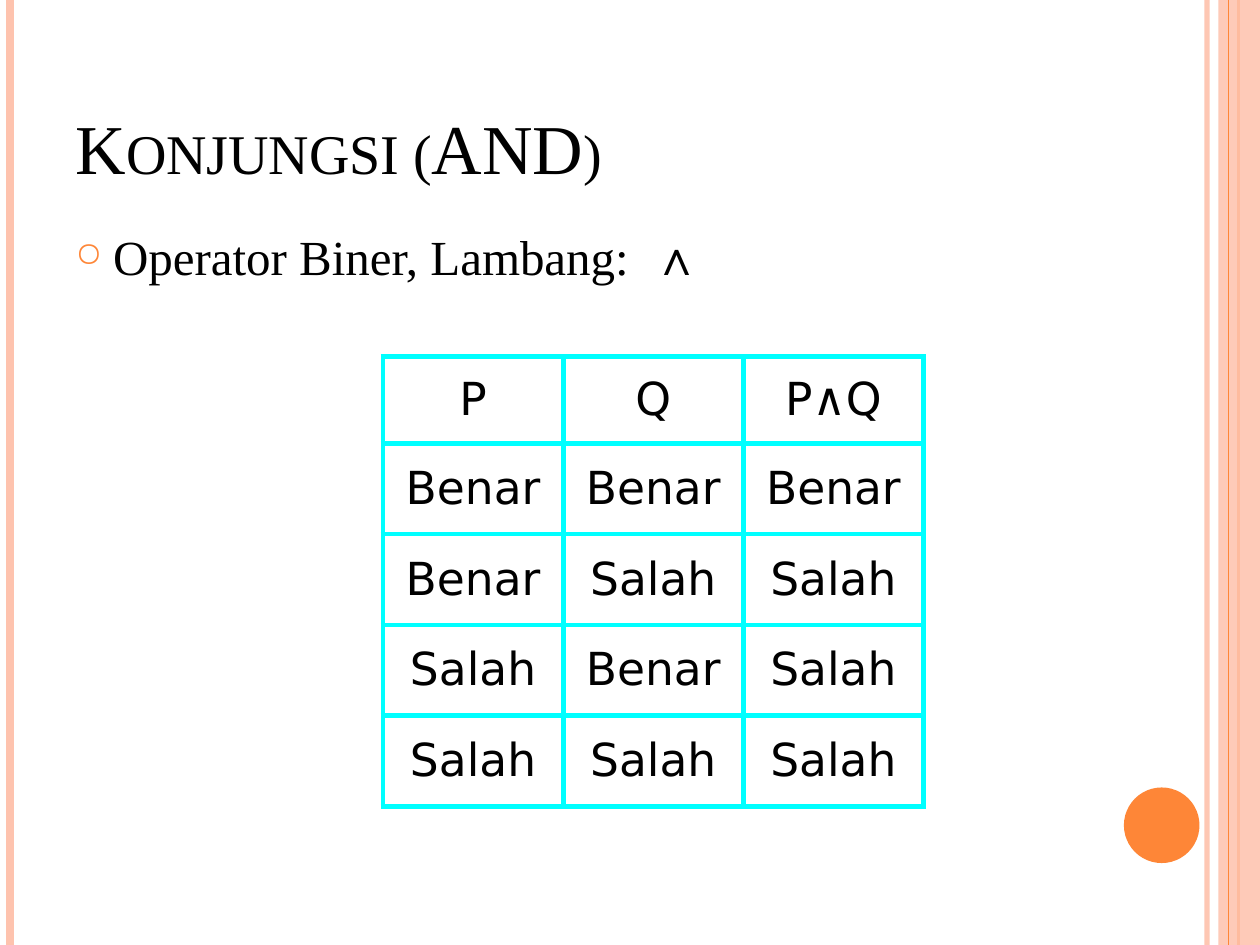
"""Build a slide on logical conjunction with its truth table."""
from typing import NamedTuple, Optional

from lxml.etree import SubElement
from pptx import Presentation
from pptx.dml.color import RGBColor
from pptx.enum.shapes import MSO_CONNECTOR, MSO_SHAPE
from pptx.enum.text import MSO_ANCHOR, PP_ALIGN
from pptx.oxml.ns import qn
from pptx.util import Inches, Pt

HUES = {"ink": "000000", "peach": "FEC3AE", "orange": "FE8637", "cyan": "00FFFF"}
SERIF = "Times New Roman"
SANS = "DejaVu Sans"


class Rule(NamedTuple):
    x: float
    hue: str
    width: float
    alpha: Optional[int] = None


class Solid(NamedTuple):
    kind: MSO_SHAPE
    box: tuple
    hue: str
    alpha: Optional[int] = None


BACK = [Rule(9.58, "peach", 3, 93), Rule(0.08, "peach", 4.5), Rule(9.83, "orange", 1.5)]
BAND = Solid(MSO_SHAPE.RECTANGLE, (9.67, 0, 0.33, 7.5), "peach", 87)
EDGE = Rule(9.75, "orange", 0.75)
DISC = Solid(MSO_SHAPE.OVAL, (8.92, 6.25, 0.6, 0.6), "orange")
TRUTH = [
    ("P", "Q", "P∧Q"),
    ("Benar", "Benar", "Benar"),
    ("Benar", "Salah", "Salah"),
    ("Salah", "Benar", "Salah"),
    ("Salah", "Salah", "Salah"),
]


def color(hue: str) -> RGBColor:
    return RGBColor.from_string(HUES[hue])


def fade(item, alpha: Optional[int]) -> None:
    if alpha is not None:
        tone = next(item._element.spPr.iter(qn("a:srgbClr")))
        SubElement(tone, qn("a:alpha"), val=str(alpha * 1000))


def draw_rule(slide, rule: Rule) -> None:
    x = Inches(rule.x)
    line = slide.shapes.add_connector(MSO_CONNECTOR.STRAIGHT, x, 0, x, Inches(7.5))
    line.line.color.rgb = color(rule.hue)
    line.line.width = Pt(rule.width)
    fade(line, rule.alpha)
    SubElement(line._element.spPr, qn("a:effectLst"))


def draw_solid(slide, solid: Solid) -> None:
    shape = slide.shapes.add_shape(solid.kind, *map(Inches, solid.box))
    shape.shadow.inherit = False
    shape.fill.solid()
    shape.fill.fore_color.rgb = color(solid.hue)
    shape.line.fill.background()
    fade(shape, solid.alpha)


def add_run(para, text: str, size: float, face: str = SERIF, bold: bool = False):
    run = para.add_run()
    run.text = text
    run.font.size = Pt(size)
    run.font.name = face
    run.font.bold = bold
    run.font.color.rgb = color("ink")
    return run


def draw_title(slide) -> None:
    title = slide.shapes.title
    title.left, title.top, title.width, title.height = map(Inches, (0.5, 0.3, 8.17, 1.25))
    title.text_frame.vertical_anchor = MSO_ANCHOR.BOTTOM
    para = title.text_frame.paragraphs[0]
    para.alignment = PP_ALIGN.LEFT
    run = add_run(para, "Konjungsi (AND)", 40)
    run.font._element.set("cap", "small")


def draw_body(slide) -> None:
    box = slide.shapes.add_textbox(*map(Inches, (0.5, 1.75, 8.17, 5.33)))
    box.text_frame.word_wrap = True
    para = box.text_frame.paragraphs[0]
    props = para._p.get_or_add_pPr()
    props.set("marL", str(Inches(0.3)))
    props.set("indent", str(Inches(-0.3)))
    tint = SubElement(props, qn("a:buClr"))
    SubElement(tint, qn("a:srgbClr"), val=HUES["orange"])
    SubElement(props, qn("a:buSzPct"), val="70000")
    SubElement(props, qn("a:buChar"), char="○")
    tabs = SubElement(props, qn("a:tabLst"))
    SubElement(tabs, qn("a:tab"), pos=str(Inches(4.58)), algn="l")
    add_run(para, "Operator Biner, Lambang:\t", 28)
    add_run(para, "∧", 28, bold=True)


def frame_cell(cell) -> None:
    props = cell._tc.get_or_add_tcPr()
    for place, side in enumerate(("lnL", "lnR", "lnT", "lnB")):
        line = props.makeelement(qn(f"a:{side}"), {"w": str(Pt(3))})
        fill = SubElement(line, qn("a:solidFill"))
        SubElement(fill, qn("a:srgbClr"), val=HUES["cyan"])
        props.insert(place, line)


def draw_table(slide) -> None:
    frame = slide.shapes.add_table(5, 3, *map(Inches, (3.04, 2.83, 4.29, 3.57)))
    table = frame.table
    table.first_row = table.horz_banding = False
    for col in table.columns:
        col.width = Inches(1.43)
    for i, (row, words) in enumerate(zip(table.rows, TRUTH)):
        row.height = Inches(0.72 if i else 0.69)
        for cell, word in zip(row.cells, words):
            cell.fill.background()
            cell.vertical_anchor = MSO_ANCHOR.MIDDLE
            frame_cell(cell)
            para = cell.text_frame.paragraphs[0]
            para.alignment = PP_ALIGN.CENTER
            add_run(para, word, 26, SANS)


def main() -> None:
    deck = Presentation()
    deck.slide_width, deck.slide_height = Inches(10), Inches(7.5)
    slide = deck.slides.add_slide(deck.slide_layouts[5])
    for rule in BACK:
        draw_rule(slide, rule)
    draw_solid(slide, BAND)
    draw_rule(slide, EDGE)
    draw_solid(slide, DISC)
    draw_title(slide)
    draw_body(slide)
    draw_table(slide)
    deck.save("out.pptx")


if __name__ == "__main__":
    main()
